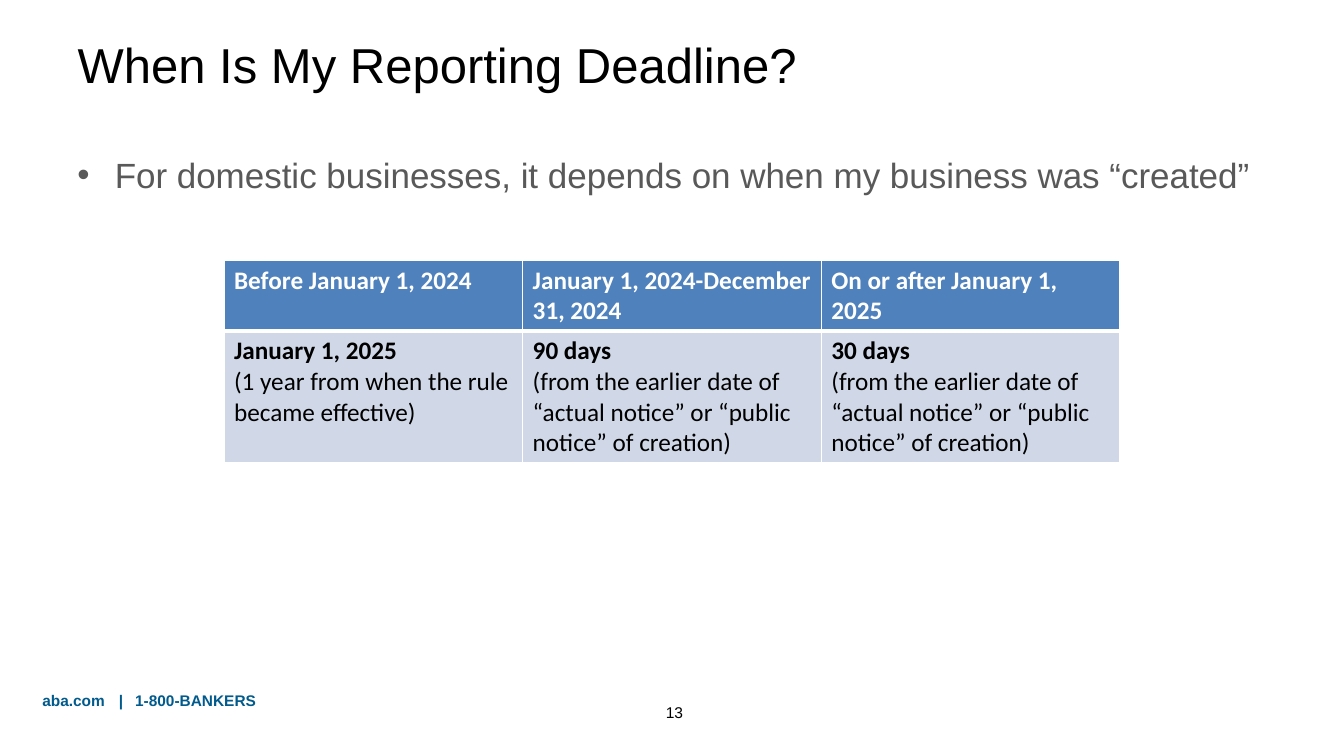
from pptx import Presentation, util as u
from pptx.dml.color import RGBColor
from pptx.enum import text
from pptx.oxml import parse_xml
from pptx.oxml.ns import nsdecls

TITLE = "When Is My Reporting Deadline?"
POINT = "For domestic businesses, it depends on when my business was “created”"
NOTICE = "(from the earlier date of “actual notice” or “public notice” of creation)"
DEADLINES = [
    ("Before January 1, 2024", "January 1, 2025", "(1 year from when the rule became effective)"),
    ("January 1, 2024-December 31, 2024", "90 days", NOTICE),
    ("On or after January 1, 2025", "30 days", NOTICE),
]
CONTACT = "aba.com\t|\t1-800-BANKERS"
CONTACT_TABS = (0.76, 0.92)
PAGE = "13"

W, H = 13.33, 7.5
TABLE_W = W * 2 / 3
ROWS = (0.69, 1.31)
HEADER, BODY, WHITE = "4F81BD", "D0D8E8", "FFFFFF"


def rgb(value):
    return RGBColor.from_string(value)


def xml(tag, attrs="", inner=""):
    return parse_xml(f"<a:{tag} {nsdecls('a')} {attrs}>{inner}</a:{tag}>")


def write(p, content, size, color="000000", bold=False, font="Arial", align=text.PP_ALIGN.LEFT):
    p.alignment = align
    r = p.add_run()
    r.text = content
    f = r.font
    f.size, f.bold, f.name = u.Pt(size), bold, font
    f.color.rgb = rgb(color)


def text_frame(s, x, y, w, h):
    tf = s.shapes.add_textbox(*map(u.Inches, (x, y, w, h))).text_frame
    tf.word_wrap = True
    return tf


def style_cell(cell, fill, bottom):
    cell.fill.solid()
    cell.fill.fore_color.rgb = rgb(fill)
    line = f'<a:solidFill><a:srgbClr val="{WHITE}"/></a:solidFill>'
    widths = {"lnL": 1, "lnR": 1, "lnT": 1 if fill == HEADER else 3, "lnB": bottom}
    for i, (side, width) in enumerate(widths.items()):
        cell._tc.get_or_add_tcPr().insert(i, xml(side, f'w="{u.Pt(width)}"', line))


prs = Presentation()
prs.slide_width, prs.slide_height = u.Inches(W), u.Inches(H)
s = prs.slides.add_slide(prs.slide_layouts[5])

title = s.shapes.title
title.left, title.top, title.width, title.height = map(u.Inches, (0.67, 0.01, 12.56, 1.25))
title.text_frame.vertical_anchor = text.MSO_ANCHOR.MIDDLE
write(title.text_frame.paragraphs[0], TITLE, 35)

p = text_frame(s, 0.67, 1.47, 12, 4.57).paragraphs[0]
pPr = p._p.get_or_add_pPr()
pPr.set("marL", str(u.Inches(0.37)))
pPr.set("indent", str(u.Inches(-0.37)))
pPr.append(xml("buFont", 'typeface="Arial"'))
pPr.append(xml("buChar", 'char="•"'))
write(p, POINT, 25, "595959")

frame = s.shapes.add_table(2, len(DEADLINES), *map(u.Inches, ((W - TABLE_W) / 2, 2.58, TABLE_W, sum(ROWS))))
table = frame.table
for row, height in zip(table.rows, ROWS):
    row.height = u.Inches(height)
for col, (created, deadline, detail) in enumerate(DEADLINES):
    head, body = table.cell(0, col), table.cell(1, col)
    style_cell(head, HEADER, 3)
    style_cell(body, BODY, 1)
    write(head.text_frame.paragraphs[0], created, 18, WHITE, True, "Calibri")
    write(body.text_frame.paragraphs[0], deadline, 18, bold=True, font="Calibri")
    write(body.text_frame.add_paragraph(), detail, 18, font="Calibri")

tf = text_frame(s, 0.42, 6.8, 2.3, 0.3)
tf.margin_left = tf.margin_right = 0
tf.margin_top = tf.margin_bottom = u.Inches(0.06)
p = tf.paragraphs[0]
stops = "".join(f'<a:tab pos="{u.Inches(t)}" algn="l"/>' for t in CONTACT_TABS)
p._p.get_or_add_pPr().append(xml("tabLst", inner=stops))
write(p, CONTACT, 11, "005A8C", True)

write(text_frame(s, 6.07, 6.92, 1.24, 0.29).paragraphs[0], PAGE, 11.1, align=text.PP_ALIGN.CENTER)

prs.save("out.pptx")
